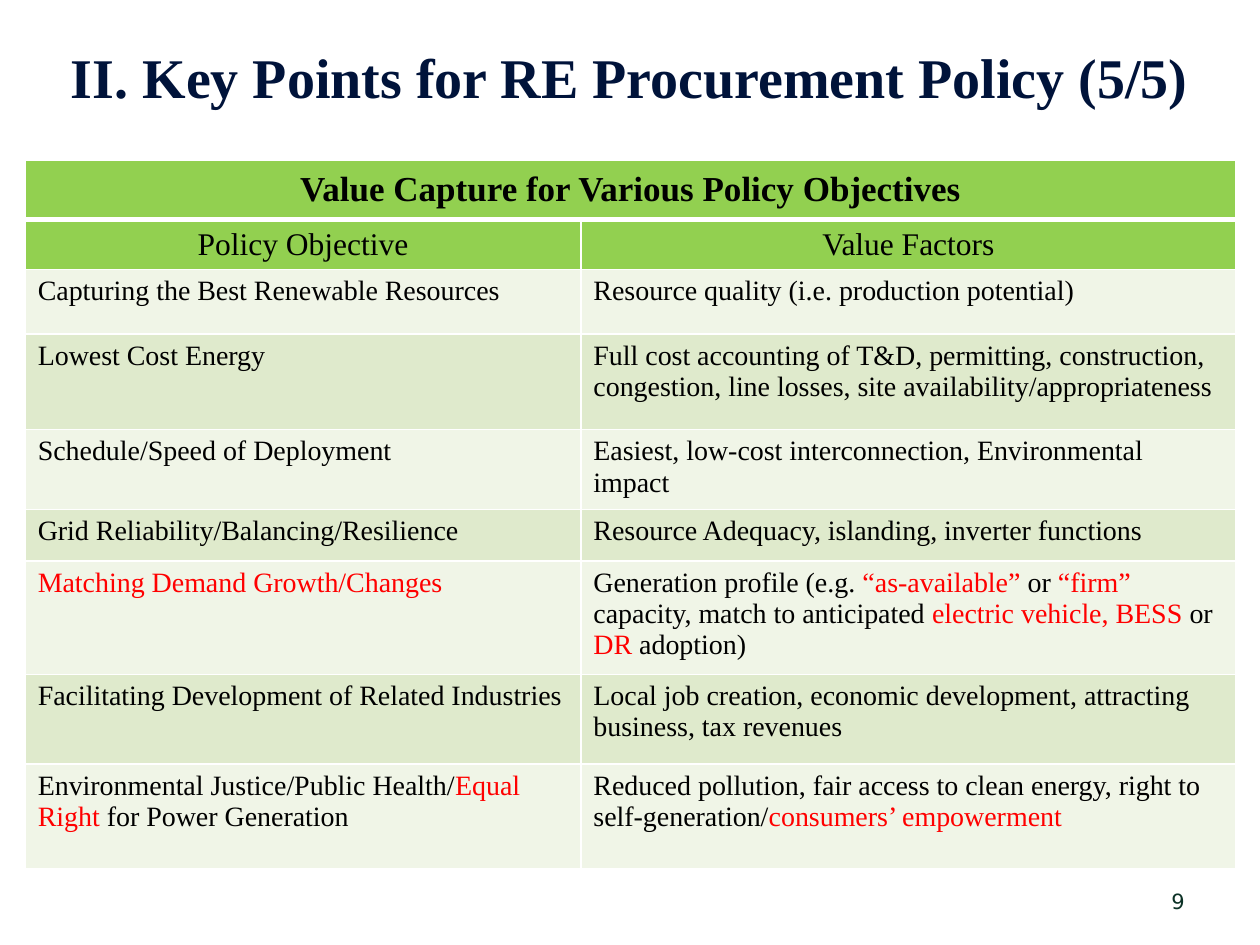
from lxml.etree import SubElement
from pptx import Presentation
from pptx.dml.color import RGBColor
from pptx.enum.text import MSO_ANCHOR, PP_ALIGN
from pptx.oxml.ns import qn
from pptx.util import Inches, Pt

COLORS = {
    "title": "00133A", "number": "0C3226", "text": "000000", "accent": "FF0000",
    "header": "92D050", "light": "F0F5E7", "dark": "DFEACC", "border": "FFFFFF",
}
SERIF = "Times New Roman"
COL_WIDTHS = [4.41, 5.2]
ROW_HEIGHTS = [0.47, 0.39, 0.51, 0.76, 0.62, 0.41, 0.71, 0.71, 0.83]
HEADING = "Value Capture for Various Policy Objectives"

# A bar switches between plain and accent colour
ROWS = [
    ("Policy Objective", "Value Factors"),
    ("Capturing the Best Renewable Resources",
     "Resource quality (i.e. production potential)"),
    ("Lowest Cost Energy",
     "Full cost accounting of T&D, permitting, construction, congestion, "
     "line losses, site availability/appropriateness"),
    ("Schedule/Speed of Deployment",
     "Easiest, low-cost interconnection, Environmental impact"),
    ("Grid Reliability/Balancing/Resilience",
     "Resource Adequacy, islanding, inverter functions"),
    ("|Matching Demand Growth/Changes",
     "Generation profile (e.g.| “as-available”| or |“firm”| capacity, match to "
     "anticipated |electric vehicle, BESS |or| DR| adoption)"),
    ("Facilitating Development of Related Industries",
     "Local job creation, economic development, attracting business, tax revenues"),
    ("Environmental Justice/Public Health/|Equal Right| for Power Generation",
     "Reduced pollution, fair access to clean energy, right to "
     "self-generation/|consumers’ empowerment"),
]


def rgb(name):
    return RGBColor.from_string(COLORS[name])


def add_run(p, text, size, color, font=SERIF, bold=False):
    r = p.add_run()
    r.text = text
    r.font.size = Pt(size)
    r.font.name = font
    r.font.bold = bold
    r.font.color.rgb = rgb(color)


def add_text(slide, box, text, align, **style):
    sp = slide.shapes.add_textbox(*[Inches(v) for v in box])
    tf = sp.text_frame
    tf.word_wrap = True
    tf.vertical_anchor = MSO_ANCHOR.MIDDLE
    p = tf.paragraphs[0]
    p.alignment = align
    add_run(p, text, **style)


def set_borders(cell, top=1, bottom=1):
    tc_pr = cell._tc.get_or_add_tcPr()
    widths = {"a:lnL": 1, "a:lnR": 1, "a:lnT": top, "a:lnB": bottom}
    for i, (tag, width) in enumerate(widths.items()):
        ln = SubElement(tc_pr, qn(tag), w=str(Pt(width)))
        fill = SubElement(ln, qn("a:solidFill"))
        SubElement(fill, qn("a:srgbClr"), val=COLORS["border"])
        tc_pr.insert(i, ln)  # borders come before the fill


def fill_cell(cell, text, size, fill, header=False, bold=False, **borders):
    cell.fill.solid()
    cell.fill.fore_color.rgb = rgb(fill)
    set_borders(cell, **borders)
    cell.margin_left = cell.margin_right = Inches(0.1)
    cell.margin_top = cell.margin_bottom = Inches(0.05)
    p = cell.text_frame.paragraphs[0]
    if header:
        cell.vertical_anchor = MSO_ANCHOR.MIDDLE
        p.alignment = PP_ALIGN.CENTER
    for i, part in enumerate(text.split("|")):
        if part:
            add_run(p, part, size, "accent" if i % 2 else "text", bold=bold)


def add_policy_table(slide):
    table = slide.shapes.add_table(
        len(ROW_HEIGHTS), len(COL_WIDTHS), Inches(0.2), Inches(1.27),
        Inches(sum(COL_WIDTHS)), Inches(sum(ROW_HEIGHTS))).table
    for col, width in zip(table.columns, COL_WIDTHS):
        col.width = Inches(width)
    for row, height in zip(table.rows, ROW_HEIGHTS):
        row.height = Inches(height)

    # Heading across both columns
    table.cell(0, 0).merge(table.cell(0, 1))
    fill_cell(table.cell(0, 0), HEADING, 20, "header", header=True, bold=True, bottom=3)
    set_borders(table.cell(0, 1), bottom=3)

    # Column headers, then banded rows
    for i, texts in enumerate(ROWS, start=1):
        for j, text in enumerate(texts):
            cell = table.cell(i, j)
            if i == 1:
                fill_cell(cell, text, 18, "header", header=True, top=3)
            else:
                fill_cell(cell, text, 16, "dark" if i % 2 else "light")


def main():
    prs = Presentation()
    prs.slide_width, prs.slide_height = Inches(10), Inches(7.5)
    slide = prs.slides.add_slide(prs.slide_layouts[6])

    # Title
    add_text(slide, (0, -0.02, 10, 1.25), "II. Key Points for RE Procurement Policy (5/5)",
             PP_ALIGN.CENTER, size=32, color="title", bold=True)
    # Page number
    add_text(slide, (7.17, 6.95, 2.33, 0.4), "9", PP_ALIGN.RIGHT,
             size=12, color="number", font="DejaVu Sans")
    add_policy_table(slide)
    prs.save("out.pptx")


if __name__ == "__main__":
    main()
